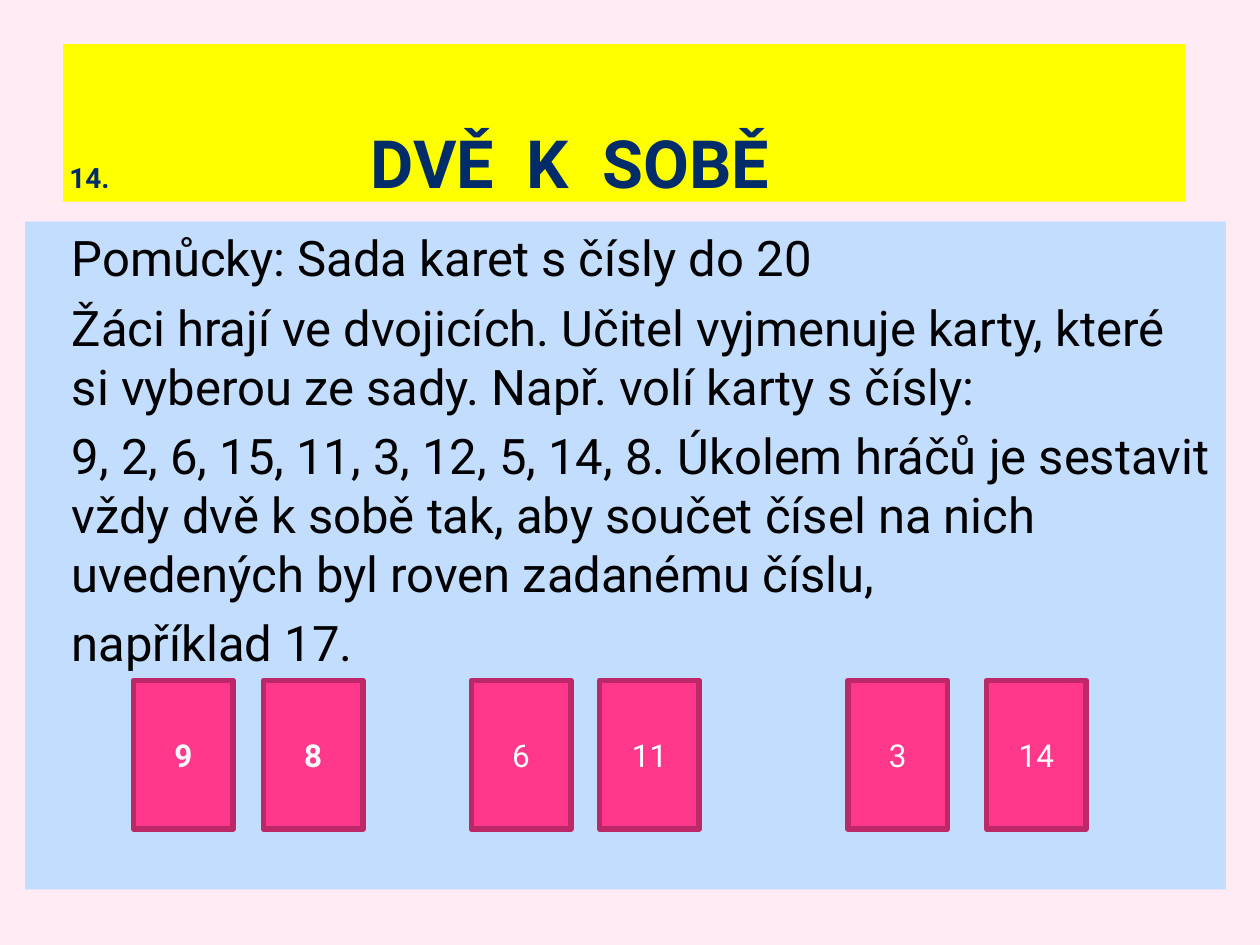
from pptx import Presentation
from pptx.dml.color import RGBColor
from pptx.enum.shapes import MSO_SHAPE
from pptx.enum.text import MSO_ANCHOR, PP_ALIGN
from pptx.oxml import parse_xml
from pptx.oxml.ns import nsdecls
from pptx.util import Inches, Pt


def rgb(color):
    return RGBColor.from_string(color)


def add_box(left, top, width, height, fill, anchor):
    """Add a filled rectangle without outline or shadow."""
    sp = s.shapes.add_shape(MSO_SHAPE.RECTANGLE, Inches(left), Inches(top),
                            Inches(width), Inches(height))
    sp.shadow.inherit = False
    sp.fill.solid()
    sp.fill.fore_color.rgb = rgb(fill)
    sp.line.fill.background()
    sp.text_frame.word_wrap = True
    sp.text_frame.vertical_anchor = anchor
    return sp


prs = Presentation()
prs.slide_width, prs.slide_height = Inches(10), Inches(7.5)
s = prs.slides.add_slide(prs.slide_layouts[6])
s.background.fill.solid()
s.background.fill.fore_color.rgb = rgb("FFEBF4")

# Title: game number, then the name at a tab stop
tf = add_box(0.5, 0.35, 8.91, 1.25, "FFFF00", MSO_ANCHOR.BOTTOM).text_frame
tf.margin_left = tf.margin_right = Inches(0.05)
tf.margin_top = tf.margin_bottom = 0
p = tf.paragraphs[0]
p.alignment = PP_ALIGN.LEFT
p._p.get_or_add_pPr().append(parse_xml(
    f'<a:tabLst {nsdecls("a")}><a:tab pos="{Inches(2.39)}" algn="l"/></a:tabLst>'))
p.font.name, p.font.bold = "Roboto", True
p.font.color.rgb = rgb("002D6A")
for text, size in [("14.", 16), ("\tDVĚ  K  SOBĚ", 38)]:
    r = p.add_run()
    r.text = text
    r.font.size = Pt(size)

# Rules of the game
rules = [
    "Pomůcky: Sada karet s čísly do 20",
    "Žáci hrají ve dvojicích. Učitel vyjmenuje karty, které si vyberou ze sady. "
    "Např. volí karty s čísly:",
    "9, 2, 6, 15, 11, 3, 12, 5, 14, 8. Úkolem hráčů je sestavit vždy dvě k sobě tak, "
    "aby součet čísel na nich uvedených byl roven zadanému číslu,",
    "například 17.",
]
tf = add_box(0.2, 1.76, 9.53, 5.3, "C3DDFF", MSO_ANCHOR.TOP).text_frame
tf.margin_left = Inches(0.37)
for i, rule in enumerate(rules):
    p = tf.add_paragraph() if i else tf.paragraphs[0]
    p.text = rule
    p.alignment = PP_ALIGN.LEFT
    p.space_before = Pt(6 if i else 0)
    p.font.name, p.font.size = "Roboto", Pt(28)
    p.font.color.rgb = rgb("000000")

# Pairs of cards that add up to 17; the first pair is emphasised
cards = [(1.06, "9"), (2.09, "8"), (3.74, "6"), (4.76, "11"), (6.73, "3"), (7.83, "14")]
for i, (left, number) in enumerate(cards):
    sp = add_box(left, 5.4, 0.79, 1.18, "FF388C", MSO_ANCHOR.MIDDLE)
    sp.line.color.rgb = rgb("BD2968")
    sp.line.width = Pt(3.15)
    p = sp.text_frame.paragraphs[0]
    p.text = number
    p.alignment = PP_ALIGN.CENTER
    p.font.name, p.font.size, p.font.bold = "Roboto", Pt(18), i < 2
    p.font.color.rgb = rgb("F8F8F8" if i < 2 else "FFFFFF")

prs.save("out.pptx")
